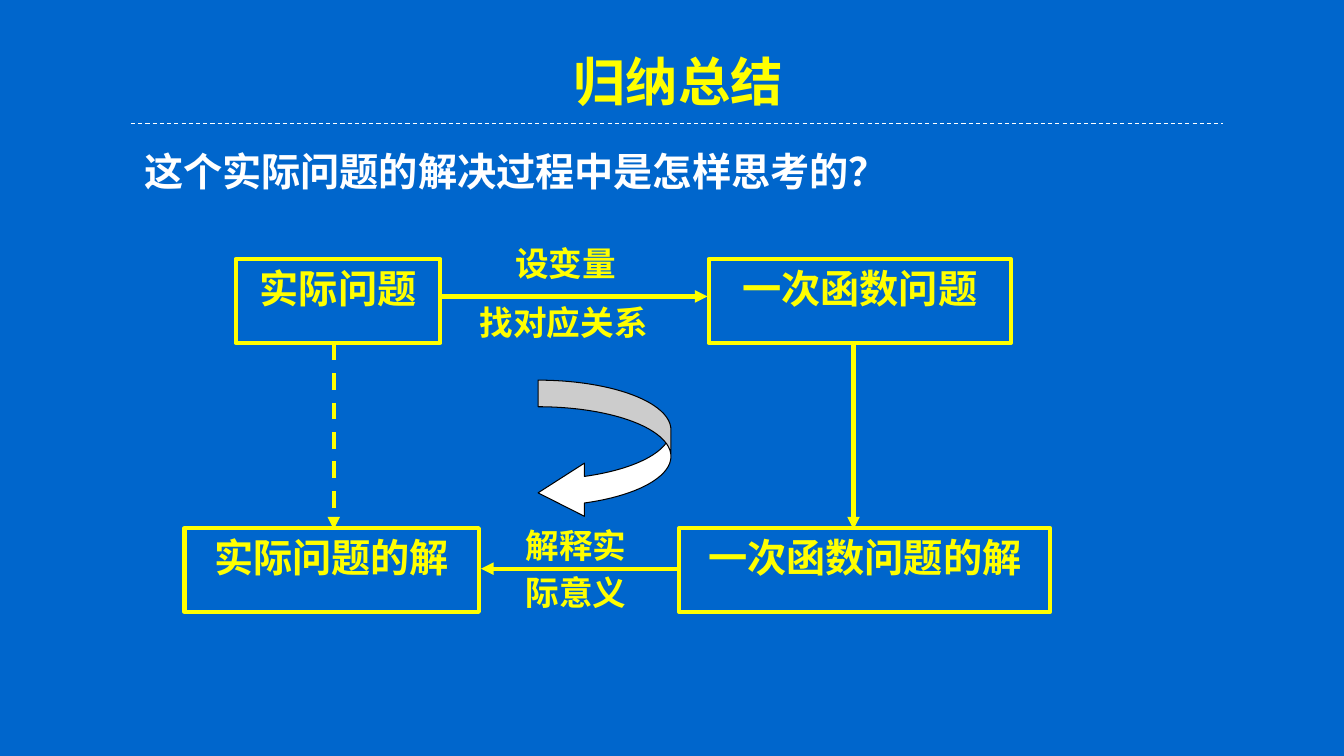
from dataclasses import dataclass
from typing import Optional

from lxml.etree import SubElement as Sub
from pptx import Presentation
from pptx.dml.color import RGBColor as Rgb
from pptx.enum.dml import MSO_LINE as Dash
from pptx.enum.shapes import MSO_CONNECTOR as Link, MSO_SHAPE as Kind
from pptx.enum.text import MSO_ANCHOR as Anchor, MSO_AUTO_SIZE as Auto, PP_ALIGN as Align
from pptx.oxml.ns import qn
from pptx.util import Cm, Pt


@dataclass(frozen=True)
class Theme:
    back: Rgb = Rgb(0x00, 0x66, 0xCC)
    main: Rgb = Rgb(0xFF, 0xFF, 0x00)
    light: Rgb = Rgb(0xFF, 0xFF, 0xFF)
    dark: Rgb = Rgb(0x00, 0x00, 0x00)
    head: float = 37.4
    text: float = 28
    note: float = 24
    thick: float = 3
    thin: float = 0.75
    serif: str = "Times New Roman"
    sans: str = "Arial"
    han: str = "Noto Sans CJK SC"


@dataclass(frozen=True)
class Box:
    text: str
    left: float
    top: float
    width: float


@dataclass(frozen=True)
class Label:
    lines: tuple[str, ...]
    left: float
    top: float
    width: float
    height: float


@dataclass(frozen=True)
class Line:
    x1: float
    y1: float
    x2: float
    y2: float
    dash: bool = False
    arrow: bool = True
    color: Optional[Rgb] = None
    width: Optional[float] = None


THEME = Theme()

# Flow chart, in centimetres
ROW1, ROW2, TALL = 6.53, 13.31, 2.11
BOXES = (
    Box("实际问题", 5.94, ROW1, 5.16),
    Box("一次函数问题", 17.86, ROW1, 7.62),
    Box("一次函数问题的解", 17.12, ROW2, 9.35),
    Box("实际问题的解", 4.65, ROW2, 7.42),
)
LABELS = (
    Label(("设变量",), 12.73, 5.99, 3.96, 1.5),
    Label(("找对应关系",), 11.84, 7.49, 6.63, 1.5),
    Label(("解释实", "际意义"), 13, 13.11, 6.45, 2.95),
)
LINES = (
    Line(3.3, 3.12, 30.81, 3.12, True, False, THEME.light, THEME.thin),
    Line(11.15, 7.47, 17.83, 7.47),
    Line(21.51, 8.61, 21.51, 13.34),
    Line(17.12, 14.33, 12.12, 14.33),
    Line(8.41, 8.66, 8.41, 13.34, True),
)


def write(para, text: str, size: float, font: str, color: Rgb):
    run = para.add_run()
    run.text = text
    run.font.size, run.font.bold = Pt(size), True
    run.font.color.rgb = color
    run.font.name = font
    return run


def place(shape, left: float, top: float, width: float, height: float) -> None:
    shape.left, shape.top = Cm(left), Cm(top)
    shape.width, shape.height = Cm(width), Cm(height)
    frame = shape.text_frame
    frame.word_wrap, frame.auto_size = True, Auto.NONE
    frame.vertical_anchor = Anchor.TOP


def add_head(slide) -> None:
    title = slide.shapes.title
    place(title, 14.2, 1.12, 6.63, 1.85)
    para = title.text_frame.paragraphs[0]
    para.alignment = Align.LEFT
    run = write(para, "归纳总结", THEME.head, THEME.han, THEME.main)
    props = run.font._element
    # Soft shadow behind the letters
    effect = Sub(props, qn("a:effectLst"))
    props.find(qn("a:latin")).addprevious(effect)
    shade = Sub(effect, qn("a:outerShdw"), blurRad="38100", dist="38100", dir="2700000")
    tint = Sub(shade, qn("a:srgbClr"), val=str(THEME.dark))
    Sub(tint, qn("a:alpha"), val="43000")
    Sub(props, qn("a:ea"), typeface=THEME.han)


def add_body(slide) -> None:
    body = slide.placeholders[1]
    place(body, 1.4, 3.58, 23.8, 1.45)
    para = body.text_frame.paragraphs[0]
    props = para._p.get_or_add_pPr()
    props.set("marL", "0")
    props.set("indent", str(Pt(2 * THEME.text)))
    para.space_before = Pt(0)
    Sub(props, qn("a:buNone"))
    write(para, "这个实际问题的解决过程中是怎样思考的？", THEME.text, THEME.sans, THEME.light)


def add_shape(slide, kind: Kind, area: tuple[float, ...], fill: Rgb, edge: Rgb, width: float):
    shape = slide.shapes.add_shape(kind, *map(Cm, area))
    shape.shadow.inherit = False
    shape.fill.solid()
    shape.fill.fore_color.rgb = fill
    shape.line.color.rgb = edge
    shape.line.width = Pt(width)
    return shape


def add_box(slide, box: Box) -> None:
    area = (box.left, box.top, box.width, TALL)
    shape = add_shape(slide, Kind.RECTANGLE, area, THEME.back, THEME.main, THEME.thick)
    place(shape, *area)
    para = shape.text_frame.paragraphs[0]
    para.alignment = Align.CENTER
    write(para, box.text, THEME.text, THEME.serif, THEME.main)


def add_label(slide, label: Label) -> None:
    area = (label.left, label.top, label.width, label.height)
    shape = slide.shapes.add_textbox(*map(Cm, area))
    place(shape, *area)
    frame = shape.text_frame
    for i, text in enumerate(label.lines):
        para = frame.add_paragraph() if i else frame.paragraphs[0]
        para.alignment = Align.JUSTIFY
        para.space_before = Pt(0.2 * THEME.note if i else 0)
        write(para, text, THEME.note, THEME.serif, THEME.main)


def add_line(slide, line: Line) -> None:
    ends = map(Cm, (line.x1, line.y1, line.x2, line.y2))
    shape = slide.shapes.add_connector(Link.STRAIGHT, *ends)
    shape.line.color.rgb = line.color or THEME.main
    shape.line.width = Pt(line.width or THEME.thick)
    if line.dash:
        shape.line.dash_style = Dash.DASH
    if line.arrow:
        Sub(shape.line._get_or_add_ln(), qn("a:tailEnd"), type="triangle")
    Sub(shape._element.spPr, qn("a:effectLst"))


def main() -> None:
    deck = Presentation()
    deck.slide_width, deck.slide_height = Cm(33.87), Cm(19.05)
    slide = deck.slides.add_slide(deck.slide_layouts[1])
    slide.background.fill.solid()
    slide.background.fill.fore_color.rgb = THEME.back

    # Title and question
    add_head(slide)
    add_body(slide)

    # Boxes, arrows and their labels
    for box in BOXES:
        add_box(slide, box)
    for line in LINES:
        add_line(slide, line)
    for label in LABELS:
        add_label(slide, label)

    # Curved arrow in the middle
    area = (13.56, 9.58, 3.35, 3.51)
    curve = add_shape(slide, Kind.CURVED_LEFT_ARROW, area, THEME.light, THEME.dark, THEME.thin)
    for i, value in enumerate((0.2, 0.4, 0.349)):
        curve.adjustments[i] = value

    deck.save("out.pptx")


if __name__ == "__main__":
    main()
